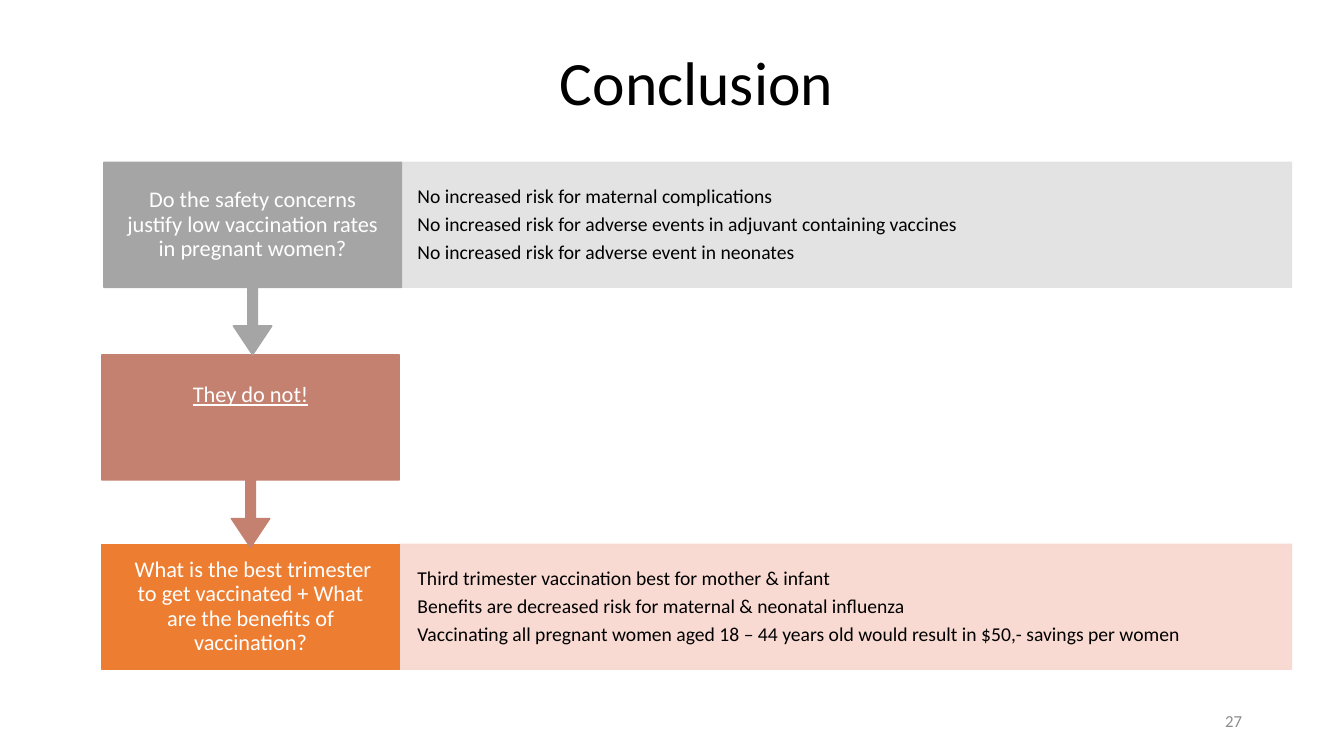
import pptx
import pptx.util
import pptx.dml.color
import pptx.enum.shapes
import pptx.enum.text
import pptx.oxml
import pptx.oxml.ns
import lxml.etree

Kind = pptx.enum.shapes.MSO_SHAPE
Align = pptx.enum.text.PP_ALIGN
Anchor = pptx.enum.text.MSO_ANCHOR

LEFT, SPLIT, RIGHT = 7.58, 29.71, 96.1
TOP, STEP, TALL = 21.47, 25.47, 16.53
LAST = 72


def tint(hue):
    return pptx.dml.color.RGBColor.from_string(hue)


class Deck:
    """Holds the style and the current slide; places are percent of its size."""

    font = "Calibri"

    def __init__(self):
        self.file = pptx.Presentation()
        self.file.slide_width = pptx.util.Inches(13.33)
        self.file.slide_height = pptx.util.Inches(7.5)
        self.slide = self.file.slides.add_slide(self.file.slide_layouts[3])

    def area(self, left, top, wide, tall):
        full = (self.file.slide_width, self.file.slide_height) * 2
        return [int(part * size / 100) for part, size in zip((left, top, wide, tall), full)]

    def move(self, shape, *place):
        shape.left, shape.top, shape.width, shape.height = self.area(*place)

    def paint(self, shape, hue, alpha=None):
        shape.fill.solid()
        shape.fill.fore_color.rgb = tint(hue)
        shape.line.color.rgb = tint(hue)
        shape.line.width = pptx.util.Pt(1)
        if alpha:
            for node in shape._element.spPr.iter(pptx.oxml.ns.qn("a:srgbClr")):
                mark = lxml.etree.SubElement(node, pptx.oxml.ns.qn("a:alpha"))
                mark.set("val", str(alpha * 1000))

    def label(self, shape, lines, size, hue, align, inset, anchor=Anchor.MIDDLE,
              space=1, after=0, under=None):
        frame = shape.text_frame
        frame.word_wrap = True
        frame.auto_size = pptx.enum.text.MSO_AUTO_SIZE.NONE
        frame.vertical_anchor = anchor
        (frame.margin_left, frame.margin_top, frame.margin_right,
         frame.margin_bottom) = [pptx.util.Inches(gap) for gap in inset]
        for rank, line in enumerate(lines):
            para = frame.add_paragraph() if rank else frame.paragraphs[0]
            para.alignment = align
            para.line_spacing = space
            para.space_before = pptx.util.Pt(0)
            para.space_after = pptx.util.Pt(after)
            run = para.add_run()
            run.text = line
            run.font.name = self.font
            run.font.size = pptx.util.Pt(size)
            run.font.color.rgb = tint(hue)
            run.font.underline = under

    def title(self, text):
        shape = self.slide.shapes.title
        self.move(shape, LEFT, 5.2, RIGHT - LEFT, 11.2)
        self.label(shape, [text], 44, "000000", Align.CENTER, (0.1, 0.05, 0.1, 0.05), Anchor.TOP)

    def step(self, kind, left, top, tall, hue, text, foot=0.12, under=None):
        shape = self.slide.shapes.add_shape(kind, *self.area(left, top, SPLIT - LEFT, tall))
        shape.shadow.inherit = False
        if kind == Kind.DOWN_ARROW_CALLOUT:
            for rank, value in enumerate((0.05, 0.1, 0.15, 0.65)):
                shape.adjustments[rank] = value
        self.paint(shape, hue)
        self.label(shape, [text], 16, "FFFFFF", Align.CENTER, (0.21, 0.12, 0.21, foot),
                   space=0.9, under=under)

    def panel(self, slot, top, hue, lines):
        shape = self.slide.placeholders[slot]
        self.move(shape, SPLIT, top, RIGHT - SPLIT, TALL)
        self.paint(shape, hue, 90)
        self.label(shape, lines, 14, "000000", Align.LEFT, (0.18, 0.19, 0.18, 0.19),
                   space=0.9, after=4.9)
        for para in shape.text_frame.paragraphs:
            props = para._p.get_or_add_pPr()
            props.set("marL", "0")
            props.set("indent", "0")
            lxml.etree.SubElement(props, pptx.oxml.ns.qn("a:buNone"))

    def number(self, text):
        shape = self.slide.shapes.add_textbox(*self.area(70.67, 92.67, 22.5, 5.33))
        self.label(shape, [text], 12, "8C8C8C", Align.RIGHT, (0.1, 0.05, 0.1, 0.05), after=6)


def main():
    deck = Deck()
    deck.title("Conclusion")
    deck.panel(1, TOP, "E1E1E1", [
        "No increased risk for maternal complications",
        "No increased risk for adverse events in adjuvant containing vaccines",
        "No increased risk for adverse event in neonates",
    ])
    deck.panel(2, LAST, "F8D7CE", [
        "Third trimester vaccination best for mother & infant",
        "Benefits are decreased risk for maternal & neonatal influenza",
        "Vaccinating all pregnant women aged 18 – 44 years old would result in "
        "$50,- savings per women",
    ])
    deck.step(Kind.RECTANGLE, LEFT, LAST, TALL, "ED7D31",
              " What is the best trimester to get vaccinated + What are the benefits of vaccination?")
    deck.step(Kind.DOWN_ARROW_CALLOUT, LEFT, TOP + STEP, STEP, "C48170",
              "They do not!", foot=0.55, under=True)
    deck.step(Kind.DOWN_ARROW_CALLOUT, LEFT + 0.15, TOP, STEP, "A5A5A5",
              "Do the safety concerns justify low vaccination rates in pregnant women?")
    deck.number("27")
    deck.file.save("out.pptx")


if __name__ == "__main__":
    main()
